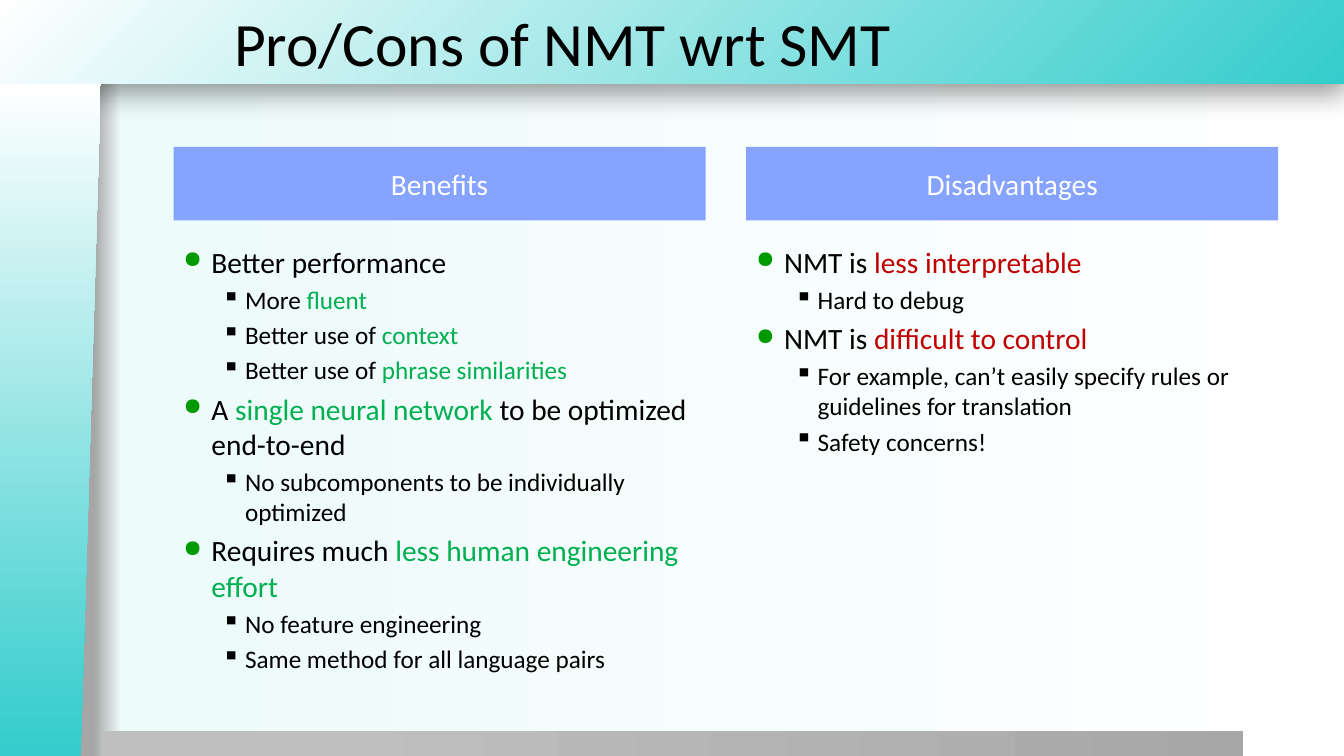
from lxml import etree
from pptx import Presentation
from pptx.dml.color import RGBColor
from pptx.enum.shapes import MSO_SHAPE
from pptx.enum.text import MSO_ANCHOR, PP_ALIGN
from pptx.oxml.ns import qn
from pptx.util import Pt

RECTANGLE = MSO_SHAPE.RECTANGLE
SLANTED = MSO_SHAPE.FLOWCHART_MANUAL_INPUT
MIDDLE = MSO_ANCHOR.MIDDLE
LEFT, CENTER = PP_ALIGN.LEFT, PP_ALIGN.CENTER

COLORS = {
    "text": "000000", "white": "FFFFFF", "teal": "34CCCC", "mist": "EDFBFB",
    "light grey": "BFBFBF", "mid grey": "A7A7A7", "edge grey": "A6A6A6",
    "header": "85A3FF", "bullet": "009900", "pro": "00B050", "con": "C00000",
}


def set_gradient(fill, owner, stops, corner=False):
    """Fill with (percent, color) stops, left to right or out of the bottom right corner."""
    fill.gradient()
    gradient = owner.find(".//" + qn("a:gradFill"))
    stop_list = gradient.find(qn("a:gsLst"))
    for stop in list(stop_list):
        stop_list.remove(stop)
    for percent, color in stops:
        stop = etree.SubElement(stop_list, qn("a:gs"), pos=str(percent * 1000))
        etree.SubElement(stop, qn("a:srgbClr"), val=COLORS[color])
    direction = gradient.find(qn("a:lin"))
    direction.set("ang", "0")
    if corner:
        circle = etree.Element(qn("a:path"), path="circle")
        etree.SubElement(circle, qn("a:fillToRect"), l="100000", t="100000")
        gradient.replace(direction, circle)


def write(para, text, size=21, color="text", accent="text", align=LEFT, before=0):
    """Write text into para; parts between bars take the accent color."""
    para.alignment = align
    para.space_before = Pt(before)
    for index, part in enumerate(text.split("|")):
        if part:
            span = para.add_run()
            span.text = part
            span.font.name = "Calibri"
            span.font.size = Pt(size)
            span.font.color.rgb = RGBColor.from_string(COLORS[accent if index % 2 else color])


deck = Presentation()
deck.slide_width, deck.slide_height = Pt(960), Pt(540)
page = deck.slides.add_slide(deck.slide_layouts[5])
set_gradient(page.background.fill, page.element,
             [(7, "edge grey"), (9, "mist"), (100, "white")])

# Title and the bands behind it
title = page.shapes.title
title.left, title.top, title.width, title.height = Pt(160), Pt(0), Pt(800), Pt(60)
title.text_frame.vertical_anchor = MIDDLE
write(title.text_frame.paragraphs[0], "Pro/Cons of NMT wrt SMT", size=44)

bands = []
for preset, place, stops, corner in [
    (RECTANGLE, (0, 0, 960, 60), [(0, "teal"), (100, "white")], True),
    (RECTANGLE, (72, 522, 816, 18), [(20, "light grey"), (100, "mid grey")], False),
    (SLANTED, (-204, 264, 480, 72), [(1, "teal"), (100, "white")], False),
]:
    band = page.shapes.add_shape(preset, *map(Pt, place))
    band.shadow.inherit = False
    band.line.fill.background()
    set_gradient(band.fill, band.element, stops, corner)
    title.element.addprevious(band.element)
    bands.append(band)

top_band, bottom_band, side_band = bands
side_band.rotation = 270
side_band.element.spPr.find(qn("a:xfrm")).set("flipV", "1")

effects = top_band.element.spPr.find(qn("a:effectLst"))
shadow = etree.SubElement(effects, qn("a:outerShdw"), blurRad=str(Pt(20)), dist=str(Pt(6)),
                          dir="5400000", algn="t", rotWithShape="0")
shade = etree.SubElement(shadow, qn("a:srgbClr"), val=COLORS["text"])
etree.SubElement(shade, qn("a:alpha"), val="40000")

# Two columns: header, then bullets as (level, text)
columns = [
    ("Benefits", "pro", [
        (0, "Better performance"),
        (1, "More |fluent"),
        (1, "Better use of |context"),
        (1, "Better use of |phrase similarities"),
        (0, "A |single neural network| to be optimized end-to-end"),
        (1, "No subcomponents to be individually optimized"),
        (0, "Requires much |less human engineering effort"),
        (1, "No feature engineering"),
        (1, "Same method for all language pairs"),
    ]),
    ("Disadvantages", "con", [
        (0, "NMT is |less interpretable"),
        (1, "Hard to debug"),
        (0, "NMT is |difficult to control"),
        (1, "For example, can’t easily specify rules or guidelines for translation"),
        (1, "Safety concerns!"),
    ]),
]
# Per level: text size, left margin, hanging indent, bullet
LEVELS = [(21, 20, 20, "●"), (18, 44, 16.5, "▪")]

for number, (heading, accent, points) in enumerate(columns):
    left = Pt(124 + 409 * number)
    header = page.shapes.add_shape(RECTANGLE, left, Pt(105), Pt(380), Pt(52.5))
    header.shadow.inherit = False
    header.fill.solid()
    header.fill.fore_color.rgb = RGBColor.from_string(COLORS["header"])
    header.line.fill.background()
    header.text_frame.vertical_anchor = MIDDLE
    write(header.text_frame.paragraphs[0], heading, color="white", align=CENTER, before=4.2)

    frame = page.shapes.add_textbox(left, Pt(170.5), Pt(380), Pt(344)).text_frame
    frame.word_wrap = True
    for index, (level, text) in enumerate(points):
        size, margin, hanging, bullet = LEVELS[level]
        para = frame.add_paragraph() if index else frame.paragraphs[0]
        para.level = level
        write(para, text, size=size, accent=accent, before=size * 0.2)
        properties = para._p.get_or_add_pPr()
        properties.set("marL", str(Pt(margin)))
        properties.set("indent", str(-Pt(hanging)))
        if level == 0:
            tint = etree.SubElement(properties, qn("a:buClr"))
            etree.SubElement(tint, qn("a:srgbClr"), val=COLORS["bullet"])
            etree.SubElement(properties, qn("a:buSzPct"), val="80000")
        etree.SubElement(properties, qn("a:buChar"), char=bullet)

deck.save("out.pptx")
